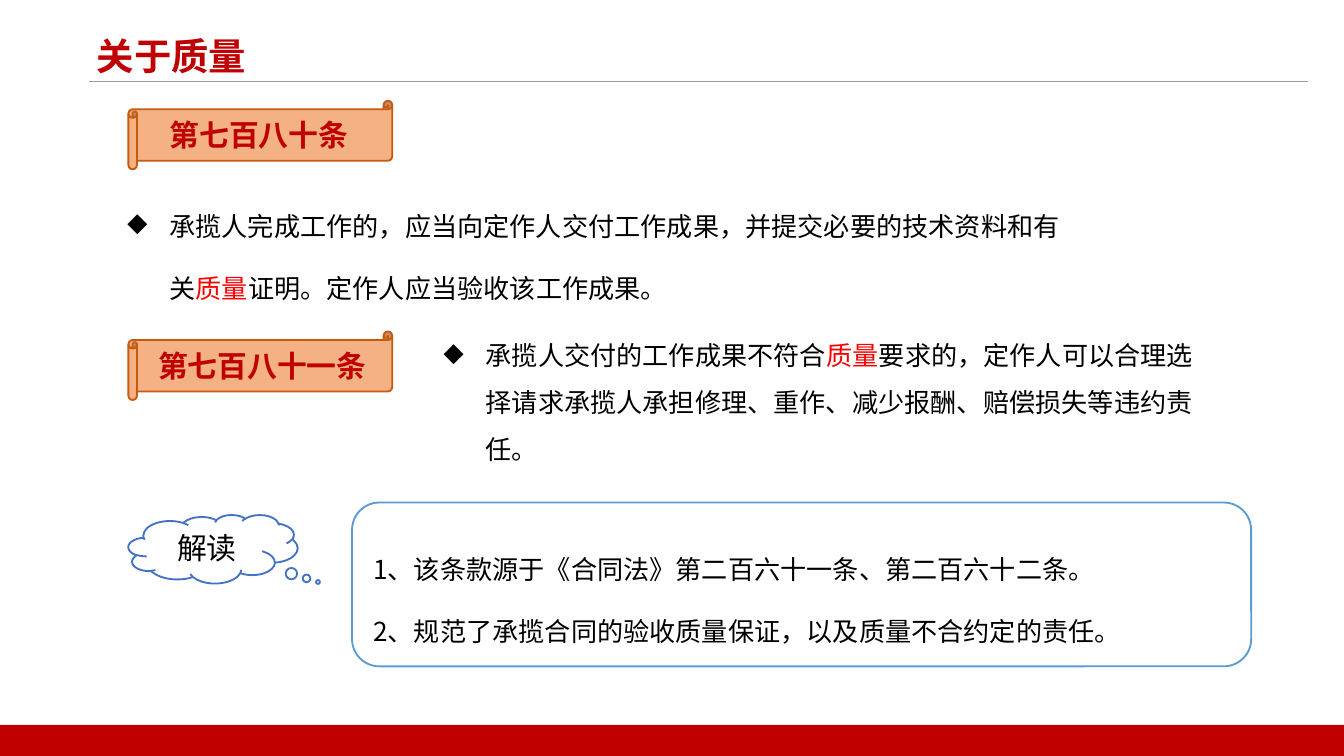
from lxml.etree import SubElement
from pptx import Presentation
from pptx.dml.color import RGBColor
from pptx.enum.shapes import MSO_CONNECTOR, MSO_SHAPE
from pptx.enum.text import MSO_ANCHOR, MSO_AUTO_SIZE, PP_ALIGN
from pptx.oxml.ns import qn
from pptx.util import Pt

FONT = "Noto Sans CJK SC"
DARK_RED = RGBColor(0xC0, 0x00, 0x00)
RED = RGBColor(0xFF, 0x00, 0x00)
BLACK = RGBColor(0x00, 0x00, 0x00)
WHITE = RGBColor(0xFF, 0xFF, 0xFF)
GRAY = RGBColor(0x99, 0x99, 0x99)
PEACH = RGBColor(0xF4, 0xB1, 0x83)
BROWN = RGBColor(0xC5, 0x5A, 0x11)
BLUE = RGBColor(0x44, 0x72, 0xC4)
LIGHT_BLUE = RGBColor(0x5B, 0x9B, 0xD5)

HEADING = {"size": Pt(20), "bold": True}
LABEL = {"size": Pt(16), "bold": True}
CLOUD = {"size": Pt(16), "bold": False}
BODY = {"size": Pt(14), "bold": False}


def add_run(paragraph, text, style, color):
    run = paragraph.add_run()
    run.text = text
    for name, value in {"name": FONT, **style}.items():
        setattr(run.font, name, value)
    run.font.color.rgb = color
    SubElement(run._r.get_or_add_rPr(), qn("a:ea"), typeface=FONT)


def add_panel(slide, kind, box, fill=None, line=None):
    shape = slide.shapes.add_shape(kind, *map(Pt, box))
    shape.shadow.inherit = False
    if fill is None:
        shape.fill.background()
    else:
        shape.fill.solid()
        shape.fill.fore_color.rgb = fill
    if line is None:
        shape.line.fill.background()
    else:
        shape.line.color.rgb = line
        shape.line.width = Pt(1)
    shape.text_frame.word_wrap = True
    shape.text_frame.vertical_anchor = MSO_ANCHOR.MIDDLE
    return shape


def add_heading(slide, box, text):
    title = slide.shapes.title
    for name, value in zip(("left", "top", "width", "height"), box):
        setattr(title, name, Pt(value))
    frame = title.text_frame
    frame.auto_size = MSO_AUTO_SIZE.NONE
    frame.vertical_anchor = MSO_ANCHOR.TOP
    frame.paragraphs[0].alignment = PP_ALIGN.LEFT
    add_run(frame.paragraphs[0], text, HEADING, DARK_RED)


def add_rule(slide, left, right, y):
    rule = slide.shapes.add_connector(
        MSO_CONNECTOR.STRAIGHT, Pt(left), Pt(y), Pt(right), Pt(y))
    rule.line.color.rgb = GRAY
    rule.line.width = Pt(0.5)
    SubElement(rule._element.spPr, qn("a:effectLst"))


def add_label(slide, kind, box, text, style, color, fill, line):
    shape = add_panel(slide, kind, box, fill, line)
    paragraph = shape.text_frame.paragraphs[0]
    paragraph.alignment = PP_ALIGN.CENTER
    add_run(paragraph, text, style, color)
    return shape


def add_clause(slide, box, parts, spacing):
    frame = slide.shapes.add_textbox(*map(Pt, box)).text_frame
    frame.word_wrap = True
    paragraph = frame.paragraphs[0]
    paragraph.line_spacing = spacing
    properties = paragraph._p.get_or_add_pPr()
    properties.set("marL", str(Pt(22.5)))
    properties.set("indent", str(-Pt(22.5)))
    SubElement(properties, qn("a:buChar"), char="◆")
    for text, color in parts:
        add_run(paragraph, text, BODY, color)


def add_notes_panel(slide, box, lines):
    panel = add_panel(slide, MSO_SHAPE.ROUNDED_RECTANGLE, box, line=LIGHT_BLUE)
    frame = panel.text_frame
    for index, text in enumerate(lines):
        paragraph = frame.add_paragraph() if index else frame.paragraphs[0]
        paragraph.alignment = PP_ALIGN.LEFT
        paragraph.line_spacing = 2.0
        add_run(paragraph, text, BODY, BLACK)


def main():
    presentation = Presentation()
    presentation.slide_width, presentation.slide_height = Pt(720), Pt(405)
    slide = presentation.slides.add_slide(presentation.slide_layouts[5])

    add_rule(slide, 47.5, 700.5, 43.7)
    add_heading(slide, (44.6, 14.4, 234, 36.7), "关于质量")
    add_panel(slide, MSO_SHAPE.RECTANGLE, (0, 388.3, 720, 16.7), DARK_RED)

    for top, text in ((54, "第七百八十条 "), (177.6, "第七百八十一条")):
        add_label(slide, MSO_SHAPE.HORIZONTAL_SCROLL, (68.8, top, 141.3, 36.7),
                  text, LABEL, DARK_RED, PEACH, BROWN)
    add_clause(slide, (61.2, 92.2, 520.6, 69), (
        ("承揽人完成工作的，应当向定作人交付工作成果，并提交必要的技术资料和有关", BLACK),
        ("质量", RED),
        ("证明。定作人应当验收该工作成果。", BLACK)), 2.0)
    add_clause(slide, (230.6, 170, 421.2, 80), (
        ("承揽人交付的工作成果不符合", BLACK),
        ("质量", RED),
        ("要求的，定作人可以合理选择请求承揽人承担修理、重作、减少报酬、赔偿损失等违约责任。",
         BLACK)), 1.5)

    cloud = add_label(slide, MSO_SHAPE.CLOUD_CALLOUT, (68.8, 275.8, 90.7, 36.7),
                      "解读", CLOUD, BLACK, WHITE, BLUE)
    cloud.adjustments[0], cloud.adjustments[1] = 0.62, 0.48
    add_notes_panel(slide, (188.6, 269.2, 481.7, 87.8), (
        "1、该条款源于《合同法》第二百六十一条、第二百六十二条。",
        "2、规范了承揽合同的验收质量保证，以及质量不合约定的责任。"))
    presentation.save("out.pptx")


if __name__ == "__main__":
    main()
